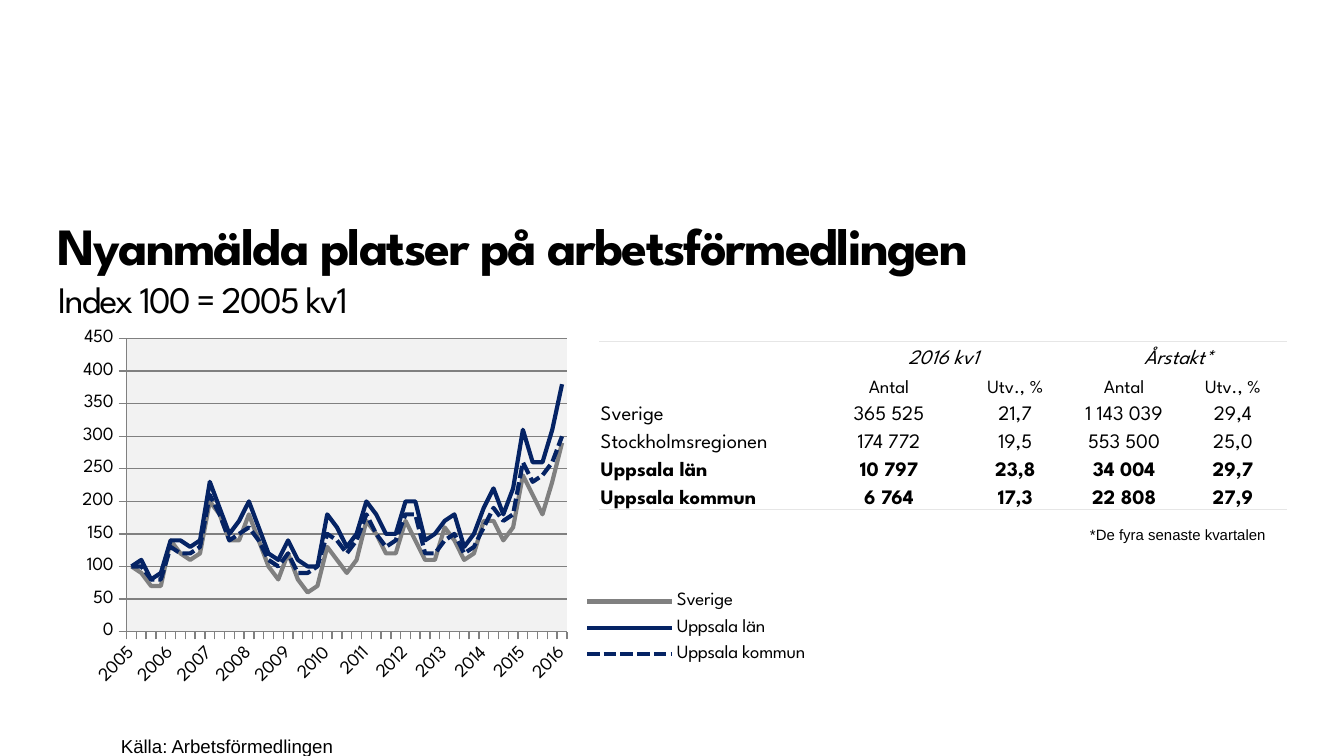
from dataclasses import dataclass
from typing import Optional

from lxml import etree
from pptx import Presentation, util as u
from pptx.chart.data import CategoryChartData
from pptx.dml.color import RGBColor
from pptx.enum import chart as ch, dml, text
from pptx.oxml import parse_xml
from pptx.oxml.ns import nsdecls, qn

PX = 9144  # 100 px to the inch
FONT, SANS = "League Spartan", "Arial"
BLACK, GREY, NAVY, RULE, PALE = "000000", "808080", "052364", "E6E6E6", "F2F2F2"
PLAIN = "{2D5ABB26-0587-4C30-8999-92F81FD0307C}"  # table style without lines


@dataclass
class Note:
    x: int
    y: int
    w: int
    h: int
    words: str
    size: int


@dataclass
class Line:
    name: str
    color: str
    dash: Optional[dml.MSO_LINE]
    vals: list[int]


NOTES = [
    Note(90, 530, 170, 42, "Källa: Arbetsförmedlingen", 10),
    Note(811, 371, 145, 100, "*De fyra senaste kvartalen", 8),
]
LINES = [
    Line("Sverige", GREY, None, [
        100, 90, 70, 70, 140, 120, 110, 120, 200, 180, 140, 140, 180, 140, 100,
        80, 120, 80, 60, 70, 130, 110, 90, 110, 170, 150, 120, 120, 170, 140,
        110, 110, 160, 140, 110, 120, 170, 170, 140, 160, 240, 210, 180, 230, 290]),
    Line("Uppsala län", NAVY, None, [
        100, 110, 80, 90, 140, 140, 130, 140, 230, 190, 150, 170, 200, 160, 120,
        110, 140, 110, 100, 100, 180, 160, 130, 150, 200, 180, 150, 150, 200, 200,
        140, 150, 170, 180, 130, 150, 190, 220, 180, 220, 310, 260, 260, 310, 380]),
    Line("Uppsala kommun", NAVY, dml.MSO_LINE.SQUARE_DOT, [
        100, 100, 80, 80, 130, 120, 120, 130, 210, 180, 140, 150, 160, 140, 110,
        100, 120, 90, 90, 100, 150, 140, 120, 140, 180, 150, 130, 140, 180, 180,
        120, 120, 140, 150, 120, 130, 160, 190, 170, 180, 260, 230, 240, 260, 300]),
]
COLS = [162, 107, 81, 81, 81]
ROWS = [
    ["", "2016 kv1", "", "Årstakt*", ""],
    ["", "Antal", "Utv., %", "Antal", "Utv., %"],
    ["Sverige", "365 525", "21,7", "1 143 039", "29,4"],
    ["Stockholmsregionen", "174 772", "19,5", "553 500", "25,0"],
    ["Uppsala län", "10 797", "23,8", "34 004", "29,7"],
    ["Uppsala kommun", "6 764", "17,3", "22 808", "27,9"],
]


def rgb(code: str) -> RGBColor:
    return RGBColor.from_string(code)


def px(*nums: int) -> list[u.Emu]:
    return [u.Emu(n * PX) for n in nums]


def style(font, size: int, face: str = FONT, bold: bool = False, slant: bool = False) -> None:
    font.name, font.size, font.bold, font.italic = face, u.Pt(size), bold, slant
    font.color.rgb = rgb(BLACK)


def add_box(slide, x: int, y: int, w: int, h: int, words: str, wrap: bool):
    """Add a text box without margins and return its frame."""
    frame = slide.shapes.add_textbox(*px(x, y, w, h)).text_frame
    frame.margin_left = frame.margin_top = frame.margin_right = frame.margin_bottom = 0
    frame.word_wrap = wrap
    frame.auto_size = text.MSO_AUTO_SIZE.NONE
    frame.text = words
    return frame


def add_title(slide) -> None:
    words = "Nyanmälda platser på arbetsförmedlingen\vIndex 100 = 2005 kv1"
    frame = add_box(slide, 43, 159, 779, 80, words, True)
    frame.vertical_anchor = text.MSO_ANCHOR.BOTTOM
    for run, size, bold in zip(frame.paragraphs[0].runs, (28, 20), (True, False)):
        style(run.font, size, bold=bold)
        run.font._element.set("spc", "-90")


def add_note(slide, note: Note) -> None:
    frame = add_box(slide, note.x, note.y, note.w, note.h, note.words, False)
    para = frame.paragraphs[0]
    para.line_spacing = u.Pt(24)
    style(para.runs[0].font, note.size, SANS)


def add_rule(cell, side: str) -> None:
    cell._tc.get_or_add_tcPr().append(parse_xml(
        f'<a:{side} {nsdecls("a")} w="12700"><a:solidFill>'
        f'<a:srgbClr val="{RULE}"/></a:solidFill></a:{side}>'))


def fill_cell(cell, row: int, col: int, words: str) -> None:
    cell.margin_left, cell.margin_top, cell.margin_right, cell.margin_bottom = px(1, 1, 1, 0)
    cell.vertical_anchor = text.MSO_ANCHOR.BOTTOM
    if row == 0:
        add_rule(cell, "lnT")
    if row == len(ROWS) - 1:
        add_rule(cell, "lnB")
    cell.fill.background()
    para = cell.text_frame.paragraphs[0]
    if not words:
        etree.SubElement(para._p, qn("a:endParaRPr"), sz="1000")
        return
    para.text = words
    para.alignment = text.PP_ALIGN.CENTER if col else text.PP_ALIGN.LEFT
    style(para.runs[0].font, 10 if row == 1 else 11, bold=row > 3, slant=row == 0)


def add_grid(slide) -> None:
    high = 125 * PX // len(ROWS)
    left, top, wide = px(446, 254, sum(COLS))
    grid = slide.shapes.add_table(
        len(ROWS), len(COLS), left, top, wide, u.Emu(high * len(ROWS))).table
    grid.first_row = grid.horz_banding = False
    grid._tbl.tblPr.find(qn("a:tableStyleId")).text = PLAIN
    for col, wide in zip(grid.columns, px(*COLS)):
        col.width = wide
    for r, row in enumerate(ROWS):
        grid.rows[r].height = u.Emu(high)
        for c, words in enumerate(row):
            fill_cell(grid.cell(r, c), r, c, words)
    for c in (1, 3):
        grid.cell(0, c).merge(grid.cell(0, c + 1))


def layout(x: float, y: float, w: float, h: float, inner: bool = False):
    """Make a manual layout in fractions of the chart area."""
    target = '<c:layoutTarget val="inner"/>' if inner else ""
    sizes = "".join(f'<c:{k} val="{v}"/>' for k, v in zip("xywh", (x, y, w, h)))
    return parse_xml(
        f'<c:layout {nsdecls("c")}><c:manualLayout>{target}<c:xMode val="edge"/>'
        f'<c:yMode val="edge"/>{sizes}</c:manualLayout></c:layout>')


def set_axes(chart) -> None:
    years, index = chart.category_axis, chart.value_axis
    index.minimum_scale, index.maximum_scale, index.major_unit = 0, 450, 50
    index.tick_labels.number_format = "#,##0"
    index.tick_labels.number_format_is_linked = False
    index.has_major_gridlines = True
    for line in (index.major_gridlines.format.line, index.format.line, years.format.line):
        line.color.rgb, line.width = rgb(GREY), u.Pt(0.75)
    for axis in (years, index):
        axis.major_tick_mark = ch.XL_TICK_MARK.OUTSIDE
        style(axis.tick_labels.font, 10)
    years._element.find(qn("c:txPr")).find(qn("a:bodyPr")).set("rot", "-2700000")


def add_lines(slide) -> None:
    data = CategoryChartData()
    data.categories = [str(2005 + n // 4) if n % 4 == 0 else ""
                       for n in range(len(LINES[0].vals))]
    for line in LINES:
        data.add_series(line.name, line.vals)
    chart = slide.shapes.add_chart(
        ch.XL_CHART_TYPE.LINE, *px(49, 241, 565, 276), data).chart
    chart.has_title = False
    style(chart.font, 10)
    set_axes(chart)
    chart.plots[0].vary_by_categories = False
    for series, line in zip(chart.plots[0].series, LINES):
        series.smooth = False
        pen = series.format.line
        pen.color.rgb, pen.width = rgb(line.color), u.Pt(2.25)
        if line.dash:
            pen.dash_style = line.dash
    chart.has_legend = True
    key = chart.legend
    key.position, key.include_in_layout = ch.XL_LEGEND_POSITION.RIGHT, False
    style(key.font, 10)
    for old in key._element.findall(qn("c:layout")):
        key._element.remove(old)
    key._element.find(qn("c:legendPos")).addnext(layout(0.68, 0.7, 0.3, 0.24))
    area = chart._chartSpace.chart.plotArea
    for old in area.findall(qn("c:layout")):
        area.remove(old)
    area.insert(0, layout(0.08, 0.04, 0.58, 0.79, True))
    area.append(parse_xml(
        f'<c:spPr {nsdecls("c", "a")}><a:solidFill>'
        f'<a:srgbClr val="{PALE}"/></a:solidFill></c:spPr>'))


def main() -> None:
    deck = Presentation()
    deck.slide_width, deck.slide_height = u.Emu(1000 * PX), u.Emu(1125 * PX // 2)
    slide = deck.slides.add_slide(deck.slide_layouts[6])
    add_title(slide)
    add_grid(slide)
    for note in NOTES:
        add_note(slide, note)
    add_lines(slide)
    deck.save("out.pptx")


if __name__ == "__main__":
    main()
